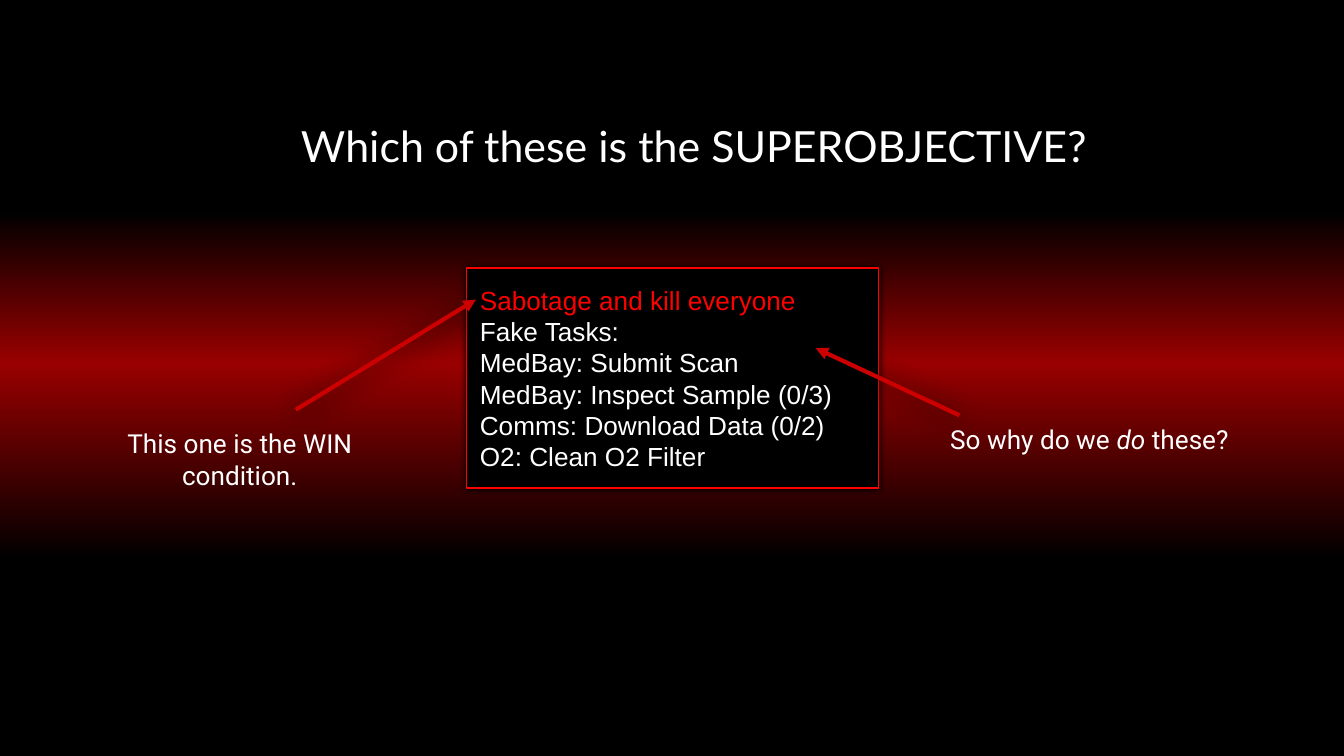
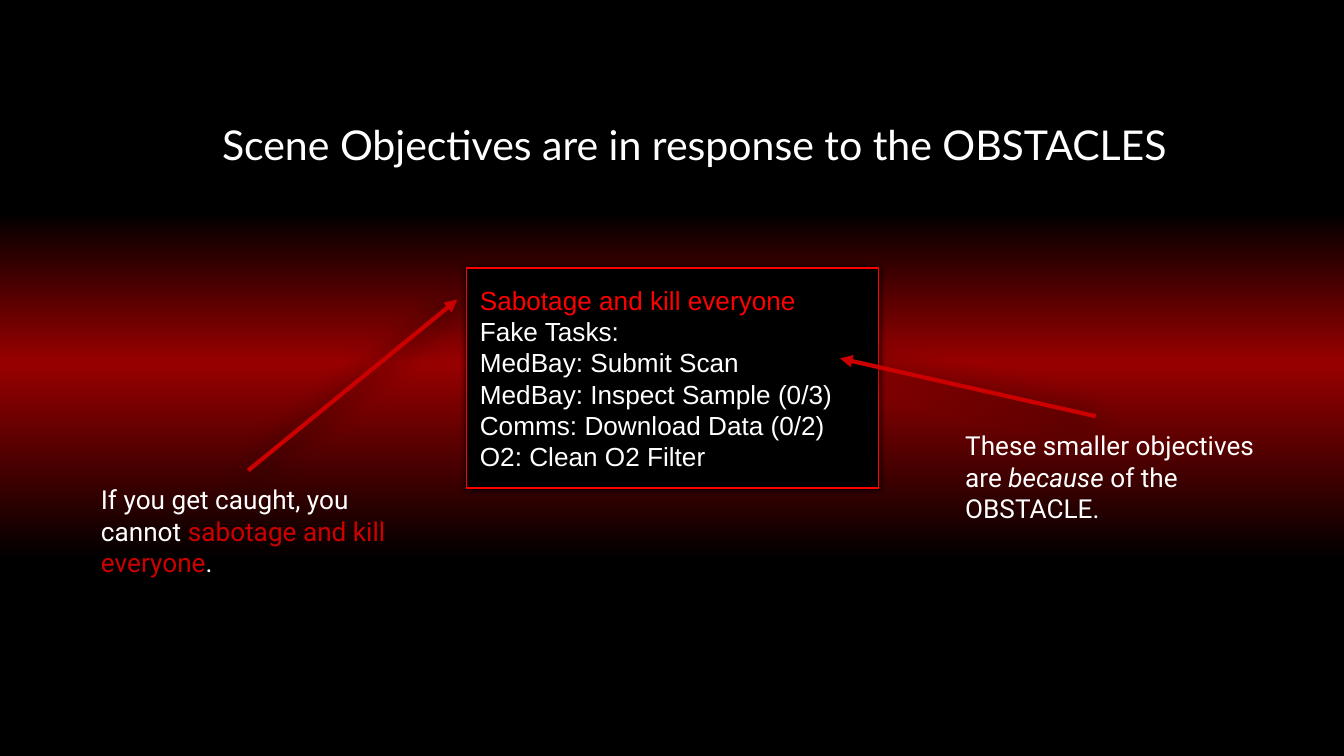
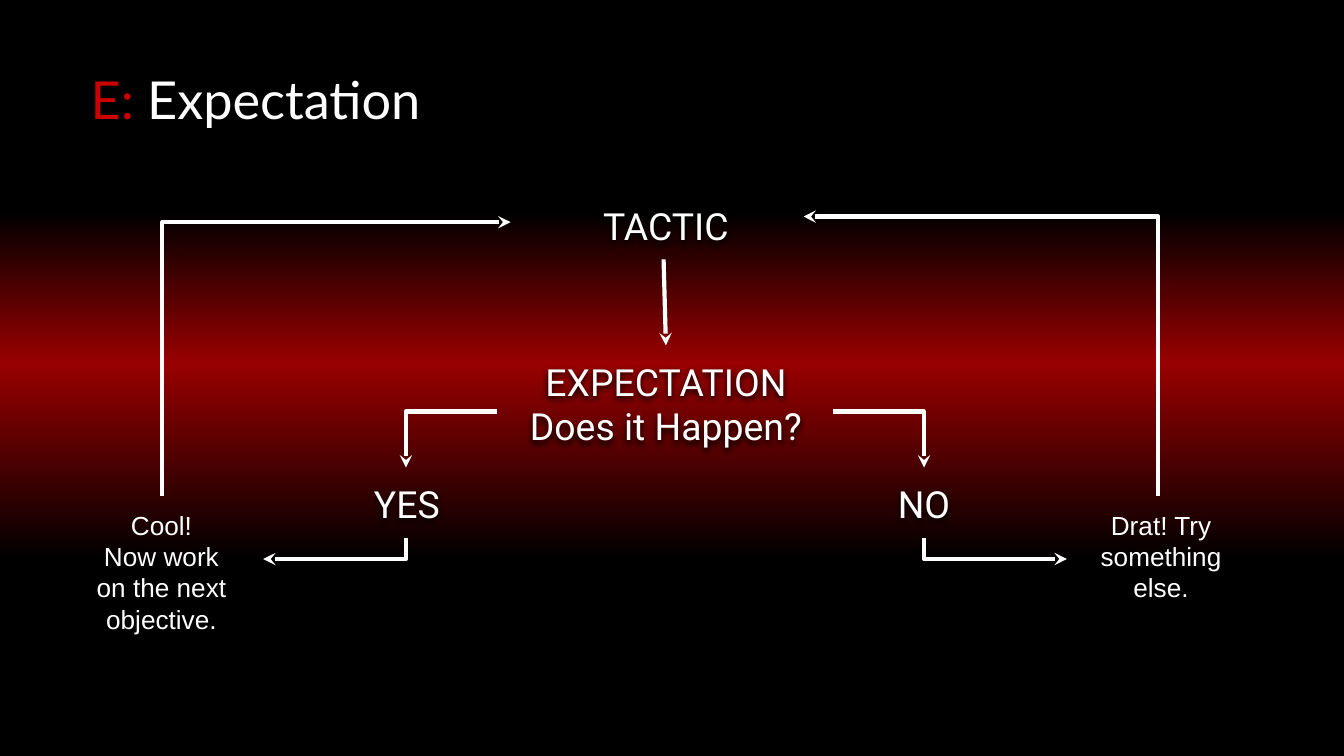
from typing import NamedTuple

from lxml.etree import SubElement
from pptx import Presentation
from pptx.dml.color import RGBColor
from pptx.enum.shapes import MSO_CONNECTOR, MSO_SHAPE
from pptx.enum.text import MSO_ANCHOR, PP_ALIGN
from pptx.oxml.ns import qn
from pptx.util import Pt

BLACK = RGBColor(0x00, 0x00, 0x00)
WHITE = RGBColor(0xFF, 0xFF, 0xFF)
DEEP_RED = RGBColor(0x99, 0x00, 0x00)
RED = RGBColor(0xCC, 0x00, 0x00)
BRIGHT_RED = RGBColor(0xFF, 0x00, 0x00)

BACKGROUND_STOPS = [(0, BLACK), (28, BLACK), (48, DEEP_RED), (74, BLACK), (100, BLACK)]
TITLE_FONT, LABEL_FONT, BODY_FONT = "Lato", "Roboto", "Arial"
INSET = 7.2
LINE_WIDTH = 2.25


class Box(NamedTuple):
    left: float
    top: float
    width: float
    height: float


class Point(NamedTuple):
    x: float
    y: float


class Run(NamedTuple):
    text: str
    color: RGBColor = WHITE
    italic: bool = False


class Shadow(NamedTuple):
    blur: float
    distance: float = 0


class Note(NamedTuple):
    box: Box
    runs: list[Run]
    align: PP_ALIGN = PP_ALIGN.LEFT


class Label(NamedTuple):
    box: Box
    lines: list[str]
    font: str = LABEL_FONT
    size: float = 20
    shadow: Shadow | None = Shadow(3.5, 1.5)


class Elbow(NamedTuple):
    begin: Point
    end: Point
    vertical_first: bool = True


BOX_SHADOW = Shadow(3.4)
ARROW_SHADOW = Shadow(15.8, 1.5)

HEADING_BOX = Box(86.5, 57, 571, 78.5)
TASK_BOX = Box(250, 143.5, 220.5, 118)
TASK_LINES = [
    [Run("Sabotage and kill everyone", BRIGHT_RED)],
    [Run("Fake Tasks:")],
    [Run("MedBay: Submit Scan")],
    [Run("MedBay: Inspect Sample (0/3)")],
    [Run("Comms: Download Data (0/2)")],
    [Run("O2: Clean O2 Filter")],
]


def set_background(master) -> None:
    fill = master.background.fill
    fill.gradient()
    fill.gradient_angle = 270
    stop_list = next(master.element.iter(qn("a:gsLst")))
    for stop in list(stop_list):
        stop_list.remove(stop)
    for position, color in BACKGROUND_STOPS:
        stop = SubElement(stop_list, qn("a:gs"), pos=str(position * 1000))
        SubElement(stop, qn("a:srgbClr"), val=str(color))


def set_shadow(shape, shadow: Shadow | None) -> None:
    """Write the effect list; call it after fill and line, which must precede it."""
    effects = SubElement(shape.element.spPr, qn("a:effectLst"))
    if shadow:
        outer = SubElement(
            effects, qn("a:outerShdw"), blurRad=str(Pt(shadow.blur)),
            dist=str(Pt(shadow.distance)), dir="5400000", algn="bl", rotWithShape="0",
        )
        SubElement(outer, qn("a:srgbClr"), val=str(BLACK))


def write_text(shape, paragraphs: list[list[Run]], *, font: str, size: float,
               align: PP_ALIGN = PP_ALIGN.LEFT, anchor: MSO_ANCHOR = MSO_ANCHOR.TOP) -> None:
    frame = shape.text_frame
    frame.word_wrap = True
    frame.vertical_anchor = anchor
    frame.margin_left = frame.margin_right = Pt(INSET)
    frame.margin_top = frame.margin_bottom = Pt(INSET)
    for index, runs in enumerate(paragraphs):
        paragraph = frame.add_paragraph() if index else frame.paragraphs[0]
        paragraph.alignment = align
        for text, color, italic in runs:
            run = paragraph.add_run()
            run.text = text
            run.font.name = font
            run.font.size = Pt(size)
            run.font.color.rgb = color
            run.font.italic = italic


def add_text(slide, box: Box, paragraphs: list[list[Run]], **text_format):
    shape = slide.shapes.add_textbox(*map(Pt, box))
    write_text(shape, paragraphs, **text_format)
    return shape


def add_task_list(slide) -> None:
    shape = slide.shapes.add_shape(MSO_SHAPE.RECTANGLE, *map(Pt, TASK_BOX))
    shape.fill.solid()
    shape.fill.fore_color.rgb = BLACK
    shape.line.color.rgb = BRIGHT_RED
    shape.line.width = Pt(0.75)
    set_shadow(shape, BOX_SHADOW)
    write_text(shape, TASK_LINES, font=BODY_FONT, size=14, anchor=MSO_ANCHOR.MIDDLE)


def add_arrow(slide, begin: Point, end: Point, *, color: RGBColor = WHITE,
              head: str = "stealth", shadow: Shadow | None = None,
              kind: MSO_CONNECTOR = MSO_CONNECTOR.STRAIGHT):
    connector = slide.shapes.add_connector(kind, *map(Pt, (*begin, *end)))
    connector.line.color.rgb = color
    connector.line.width = Pt(LINE_WIDTH)
    SubElement(connector.element.spPr.find(qn("a:ln")), qn("a:tailEnd"), type=head)
    set_shadow(connector, shadow)
    return connector


def add_elbow(slide, elbow: Elbow) -> None:
    """Draw a one-corner arrow; the preset runs sideways first, so the other kind is turned."""
    begin, end, vertical_first = elbow
    rotation = 0
    if vertical_first:
        goes_left, goes_up = end.x < begin.x, end.y < begin.y
        rotation = 90 if goes_left else 270
        center = Point((begin.x + end.x) / 2, (begin.y + end.y) / 2)
        half_width = abs(end.y - begin.y) / 2
        half_height = abs(end.x - begin.x) / 2
        if goes_left == goes_up:
            half_width = -half_width
        begin = Point(center.x - half_width, center.y - half_height)
        end = Point(center.x + half_width, center.y + half_height)
    connector = add_arrow(slide, begin, end, kind=MSO_CONNECTOR.ELBOW)
    properties = connector.element.spPr
    properties.find(qn("a:prstGeom")).set("prst", "bentConnector2")
    if rotation:
        properties.find(qn("a:xfrm")).set("rot", str(rotation * 60000))


def add_slide(presentation):
    return presentation.slides.add_slide(presentation.slide_layouts[6])


def build_objective_slide(presentation, heading: str, heading_size: float,
                          notes: list[Note], arrows: list[tuple[Point, Point]]):
    """Return the shapes of the notes and of the arrows."""
    slide = add_slide(presentation)
    add_task_list(slide)
    add_text(slide, HEADING_BOX, [[Run(heading)]], font=TITLE_FONT,
             size=heading_size, align=PP_ALIGN.CENTER)
    note_shapes = [
        add_text(slide, note.box, [note.runs], font=LABEL_FONT, size=14, align=note.align)
        for note in notes
    ]
    arrow_shapes = [
        add_arrow(slide, begin, end, color=RED, head="triangle", shadow=ARROW_SHADOW)
        for begin, end in arrows
    ]
    return note_shapes, arrow_shapes


def build_superobjective_slide(presentation) -> None:
    build_objective_slide(
        presentation, "Which of these is the SUPEROBJECTIVE?", 23,
        [
            Note(Box(42.5, 222, 172, 43), [Run("This one is the WIN condition.")],
                 PP_ALIGN.CENTER),
            Note(Box(502, 219.5, 172, 43),
                 [Run("So why do we "), Run("do", italic=True), Run(" these?")]),
        ],
        [(Point(158.5, 219.5), Point(255, 160.5)), (Point(514, 222.5), Point(437, 186.5))],
    )


def build_obstacles_slide(presentation) -> None:
    notes, arrows = build_objective_slide(
        presentation, "Scene Objectives are in response to the OBSTACLES", 22,
        [
            Note(Box(47, 252, 172, 62),
                 [Run("If you get caught, you cannot "),
                  Run("sabotage and kill everyone", RED), Run(".")]),
            Note(Box(510, 223, 172, 62),
                 [Run("These smaller objectives are "), Run("because ", italic=True),
                  Run("of the OBSTACLE.")]),
        ],
        [(Point(133, 252), Point(245, 160.5)), (Point(587, 223), Point(450, 192))],
    )
    arrows[0].begin_connect(notes[0], 0)


def build_expectation_slide(presentation) -> None:
    slide = add_slide(presentation)
    add_text(slide, Box(41.5, 29, 569.5, 51), [[Run("E:", RED), Run(" Expectation")]],
             font=TITLE_FONT, size=28)

    labels = [
        Label(Box(266.5, 185, 180.5, 71), ["EXPECTATION", "Does it Happen?"]),
        Label(Box(266.5, 101.5, 180.5, 71), ["TACTIC"]),
        Label(Box(169.5, 250.5, 97, 38), ["YES"]),
        Label(Box(446.5, 250.5, 97, 49), ["NO"]),
        Label(Box(571.5, 265.5, 101, 82), ["Drat! Try something else."], BODY_FONT, 14, None),
        Label(Box(41.5, 265.5, 90, 82), ["Cool!", "Now work on the next objective."],
              BODY_FONT, 14, None),
    ]
    label_shapes = []
    for label in labels:
        shape = add_text(slide, label.box, [[Run(line)] for line in label.lines],
                         font=label.font, size=label.size, align=PP_ALIGN.CENTER)
        set_shadow(shape, label.shadow)
        label_shapes.append(shape)

    elbows = [
        Elbow(Point(266.5, 220.5), Point(217.5, 250.5), vertical_first=False),
        Elbow(Point(446.5, 220.5), Point(495, 250.5), vertical_first=False),
        Elbow(Point(217.5, 288.5), Point(141, 299.5)),
        Elbow(Point(495, 288.5), Point(571.5, 299.5)),
        Elbow(Point(87, 265.5), Point(273.5, 119)),
        Elbow(Point(620.5, 265.5), Point(430.5, 116)),
    ]
    for elbow in elbows:
        add_elbow(slide, elbow)

    tactic_arrow = add_arrow(slide, Point(355.5, 139), Point(356.5, 185))
    tactic_arrow.end_connect(label_shapes[0], 0)


def main() -> None:
    presentation = Presentation()
    presentation.slide_width = Pt(720)
    presentation.slide_height = Pt(405)
    set_background(presentation.slide_master)
    build_superobjective_slide(presentation)
    build_obstacles_slide(presentation)
    build_expectation_slide(presentation)
    presentation.save("out.pptx")


if __name__ == "__main__":
    main()
